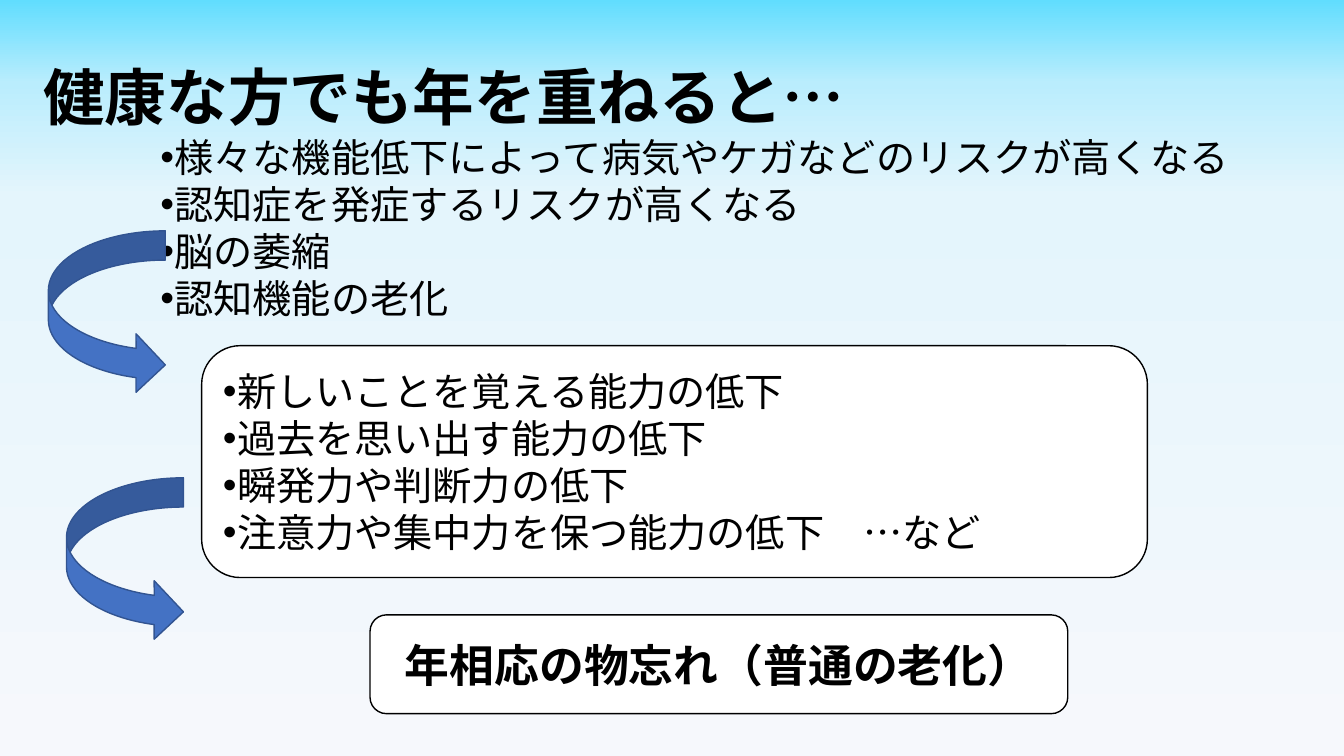
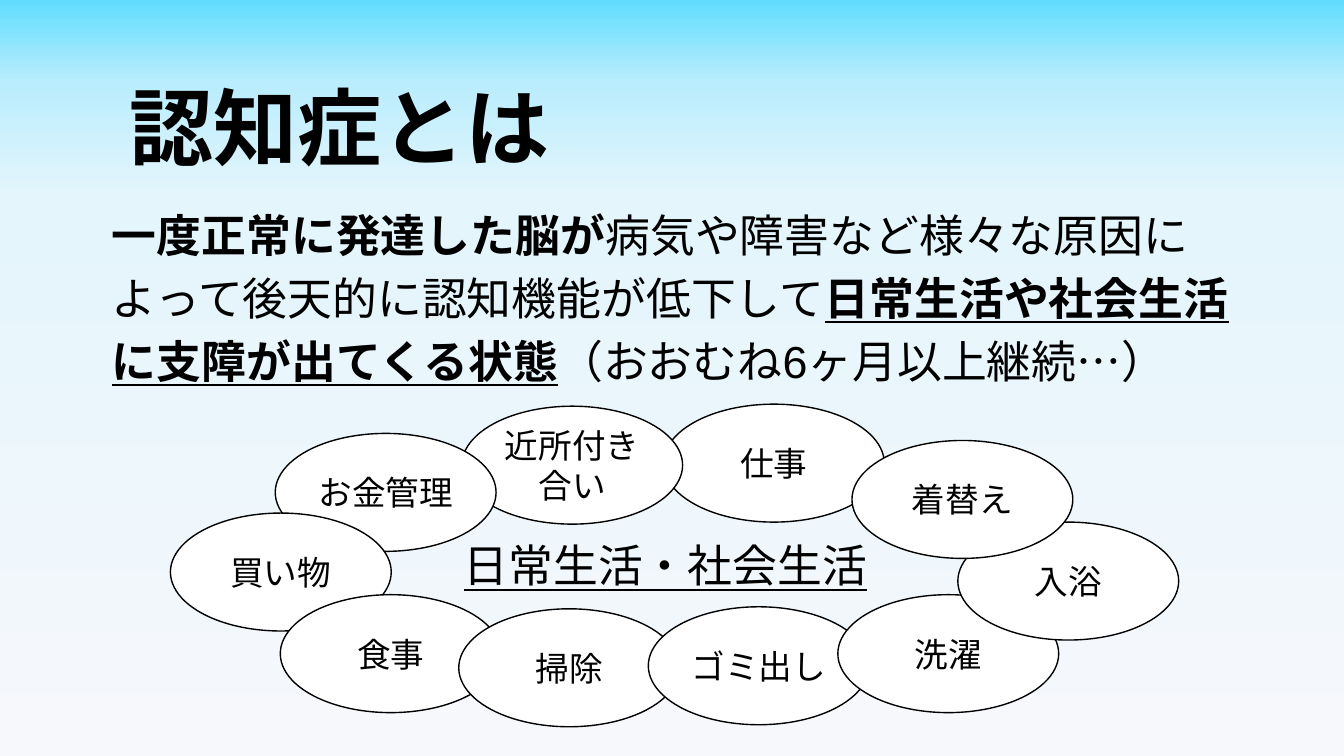
from copy import deepcopy
from dataclasses import dataclass

from pptx import Presentation
from pptx.dml.color import RGBColor
from pptx.enum.lang import MSO_LANGUAGE_ID as Lang
from pptx.enum.shapes import MSO_SHAPE as Shape
from pptx.enum.text import MSO_ANCHOR as Anchor, MSO_AUTO_SIZE as AutoSize, PP_ALIGN as Align
from pptx.oxml.ns import qn
from pptx.util import Inches, Pt


@dataclass(frozen=True)
class Theme:
    ink: str = "000000"
    paper: str = "FFFFFF"
    arrow: str = "4472C4"
    arrow_edge: str = "325491"
    sky: tuple = ((0, "61DDFE"), (0.11, "BAEDFD"), (0.26, "E4F5FC"), (1, "F6F8FC"))
    latin: str = "Arial"
    japanese: str = "Noto Sans CJK JP"
    heading: int = 44
    big_heading: int = 60
    statement: int = 32
    item: int = 28
    label: int = 24
    line: int = 1
    bullet_indent: float = 0.14


THEME = Theme()


def assign(target, values):
    for name, value in values.items():
        setattr(target, name, value)


class Builder:
    """Holds the style, the deck and the current slide."""

    def __init__(self, theme):
        self.theme = theme
        self.deck = Presentation()
        assign(self.deck, {"slide_width": Inches(13.33), "slide_height": Inches(7.5)})
        self.page = None
        self.paint_background()

    def paint_background(self):
        master = self.deck.slide_master
        fill = master.background.fill
        fill.gradient()
        fill.gradient_angle = 270
        stops = master.element.find(".//" + qn("a:gsLst"))
        while len(stops) < len(self.theme.sky):
            stops.append(deepcopy(stops[0]))
        for stop, (position, color) in zip(fill.gradient_stops, self.theme.sky):
            stop.position = position
            stop.color.rgb = RGBColor.from_string(color)

    def new_page(self):
        self.page = self.deck.slides.add_slide(self.deck.slide_layouts[1])

    def place(self, shape, area):
        names = ("left", "top", "width", "height")
        assign(shape, dict(zip(names, map(Inches, area))))

    def set_text(self, shape, paragraphs, size, anchor=Anchor.TOP, align=Align.LEFT,
                 spacing=1.0, indent=None, latin=None, **style):
        """Each paragraph is a string or a list of (text, style) spans."""
        frame = shape.text_frame
        assign(frame, {"word_wrap": True, "auto_size": AutoSize.NONE,
                       "vertical_anchor": anchor})
        for number, content in enumerate(paragraphs):
            para = frame.add_paragraph() if number else frame.paragraphs[0]
            assign(para, {"alignment": align, "line_spacing": spacing,
                          "space_before": Pt(0), "space_after": Pt(0)})
            self.set_bullet(para, indent)
            spans = [(content, {})] if isinstance(content, str) else content
            for text, extra in spans:
                span = para.add_run()
                span.text = text
                self.set_font(span.font, size, latin, {**style, **extra})

    def set_font(self, font, size, latin, style):
        assign(font, {"name": latin or self.theme.latin, "size": Pt(size),
                      "language_id": Lang.JAPANESE, **style})
        font.color.rgb = RGBColor.from_string(self.theme.ink)
        east = font._element.makeelement(qn("a:ea"), {"typeface": self.theme.japanese})
        font._element.find(qn("a:latin")).addnext(east)

    def set_bullet(self, para, indent):
        props = para._p.get_or_add_pPr()
        hang = 0 if indent is None else self.theme.bullet_indent
        props.set("marL", str(Inches((indent or 0) + hang)))
        props.set("indent", str(-Inches(hang)))
        if indent is None:
            parts = [("a:buNone", {})]
        else:
            parts = [("a:buFont", {"typeface": self.theme.latin}), ("a:buChar", {"char": "•"})]
        for tag, values in parts:
            props.append(props.makeelement(qn(tag), values))

    def title(self, text, area, size):
        self.place(self.page.shapes.title, area)
        self.set_text(self.page.shapes.title, [text], size, bold=True)

    def body(self, paragraphs, area, size, **options):
        box = self.page.placeholders[1]
        self.place(box, area)
        self.set_text(box, paragraphs, size, **options)

    def text(self, text, area, size, **options):
        box = self.page.shapes.add_textbox(*map(Inches, area))
        self.set_text(box, [text], size, latin=self.theme.japanese, **options)

    def shape(self, kind, area, fill, edge):
        shape = self.page.shapes.add_shape(kind, *map(Inches, area))
        shape.shadow.inherit = False
        shape.fill.solid()
        shape.fill.fore_color.rgb = RGBColor.from_string(fill)
        shape.line.color.rgb = RGBColor.from_string(edge)
        shape.line.width = Pt(self.theme.line)
        return shape

    def panel(self, kind, area, paragraphs, size, **options):
        shape = self.shape(kind, area, self.theme.paper, self.theme.ink)
        self.set_text(shape, paragraphs, size, anchor=Anchor.MIDDLE, **options)

    def curved_arrow(self, left, top):
        self.shape(Shape.CURVED_RIGHT_ARROW, (left, top, 1.16, 1.62),
                   self.theme.arrow, self.theme.arrow_edge)


def build_aging(show):
    show.new_page()
    show.title("健康な方でも年を重ねると…", (0.33, 0.53, 12.67, 0.83), THEME.heading)
    show.body(["様々な機能低下によって病気やケガなどのリスクが高くなる",
               "認知症を発症するリスクが高くなる", "脳の萎縮", "認知機能の老化"],
              (0.33, 1.27, 12.67, 1.99), THEME.item, indent=1.16)

    # Declining abilities and the conclusion
    show.panel(Shape.ROUNDED_RECTANGLE, (2, 3.43, 9.38, 2.3),
               ["新しいことを覚える能力の低下", "過去を思い出す能力の低下",
                "瞬発力や判断力の低下", "注意力や集中力を保つ能力の低下　…など"],
               THEME.item, indent=0)
    show.panel(Shape.ROUNDED_RECTANGLE, (3.67, 6.1, 6.92, 0.98),
               ["年相応の物忘れ（普通の老化）"], THEME.statement,
               align=Align.CENTER, latin=THEME.japanese, bold=True)

    # Steps from one box to the next
    for left, top in ((0.66, 4.74), (0.48, 2.29)):
        show.curved_arrow(left, top)


def build_dementia(show):
    show.new_page()
    show.title("認知症とは", (1.18, 0.7, 4.74, 1.11), THEME.big_heading)
    definition = [("一度正常に発達した脳が", {"bold": True}),
                  ("病気や障害など様々な原因によって後天的に認知機能が低下して", {}),
                  ("日常生活や社会生活に支障が出てくる状態", {"bold": True, "underline": True}),
                  ("（おおむね6ヶ月以上継続…）", {})]
    show.body([definition], (1.01, 1.92, 11.34, 1.96), THEME.statement, spacing=Pt(45))
    show.text("日常生活・社会生活", (4.5, 5.29, 4.36, 0.64), THEME.statement, underline=True)

    # Ring of daily activities, from back to front
    activities = (("仕事", 6.58, 4.01), ("近所付き合い", 4.58, 4.03),
                  ("お金管理", 2.73, 4.3), ("買い物", 1.69, 5.09),
                  ("食事", 2.78, 5.9), ("掃除", 4.55, 6.04), ("ゴミ出し", 6.43, 6.02),
                  ("洗濯", 8.31, 5.9), ("入浴", 9.5, 5.18), ("着替え", 8.45, 4.37))
    for name, left, top in activities:
        show.panel(Shape.OVAL, (left, top, 2.19, 1.17), [name], THEME.label,
                   align=Align.CENTER, latin=THEME.japanese)


def main():
    show = Builder(THEME)
    build_aging(show)
    build_dementia(show)
    show.deck.save("out.pptx")


if __name__ == "__main__":
    main()
